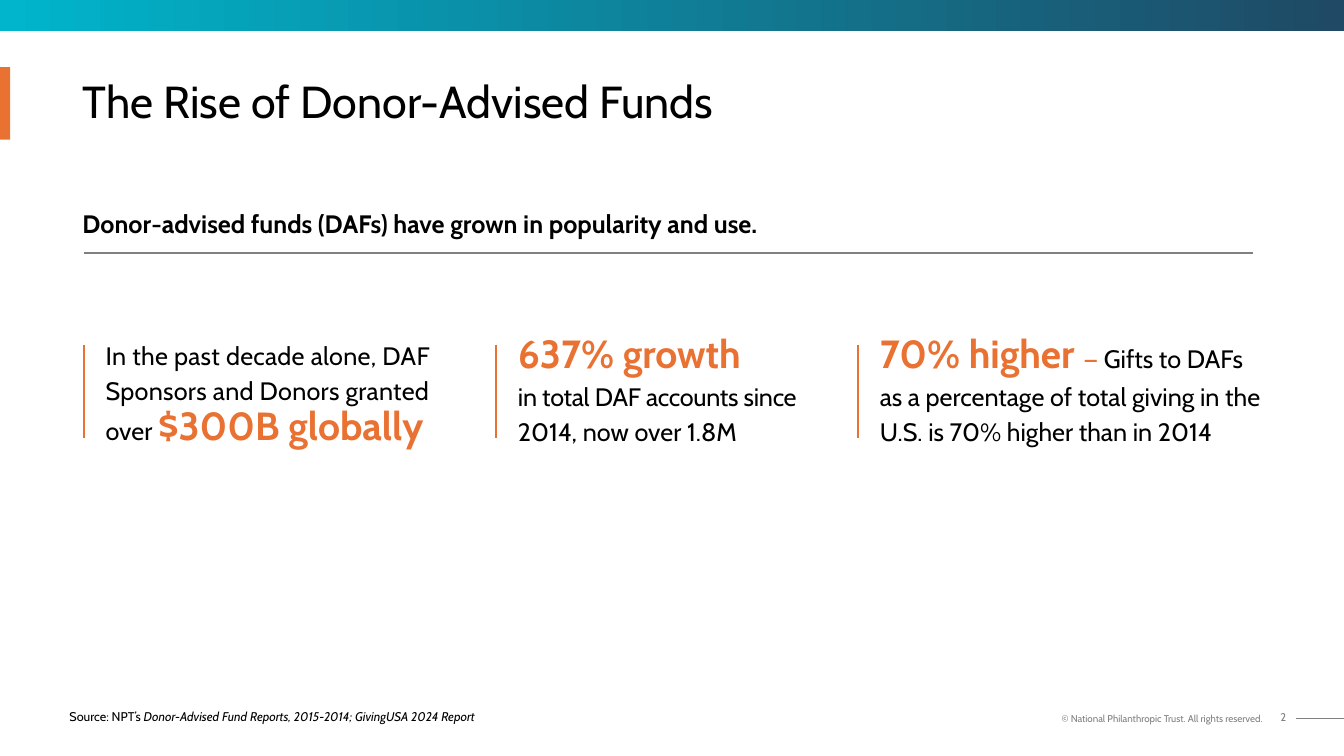
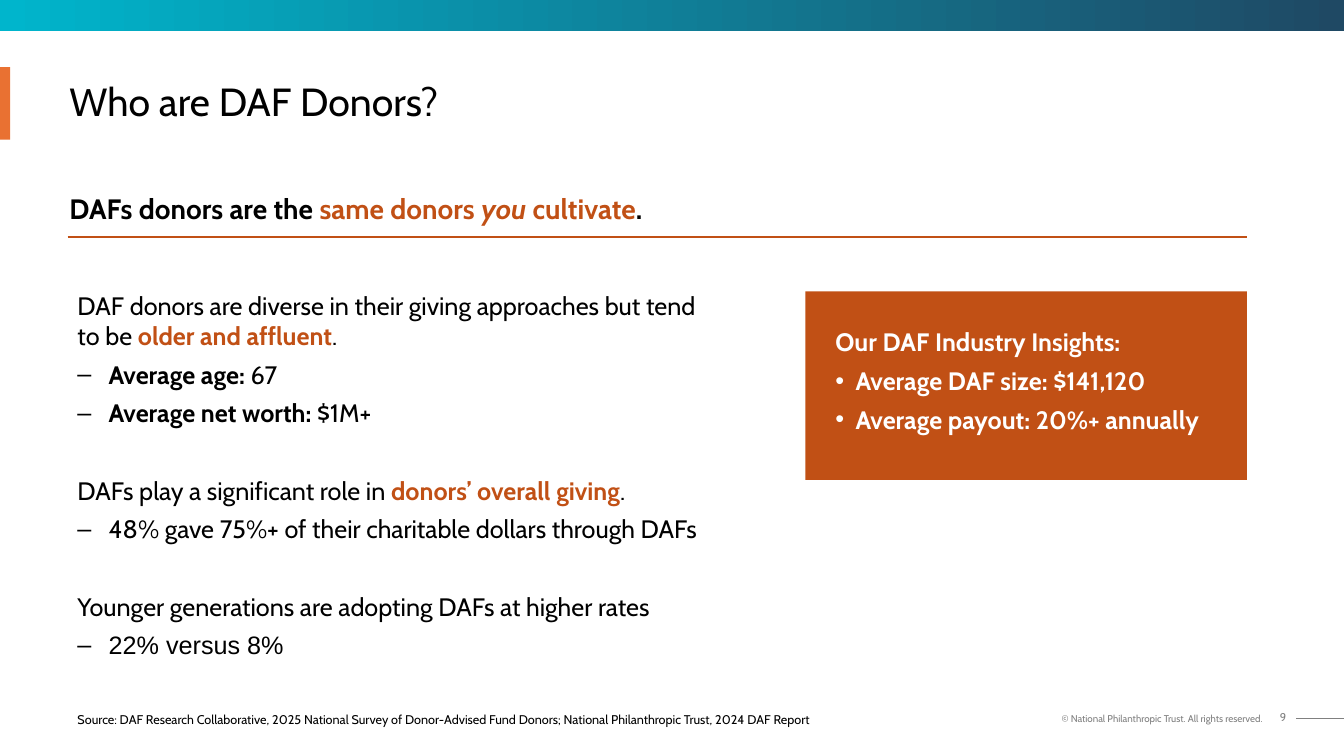
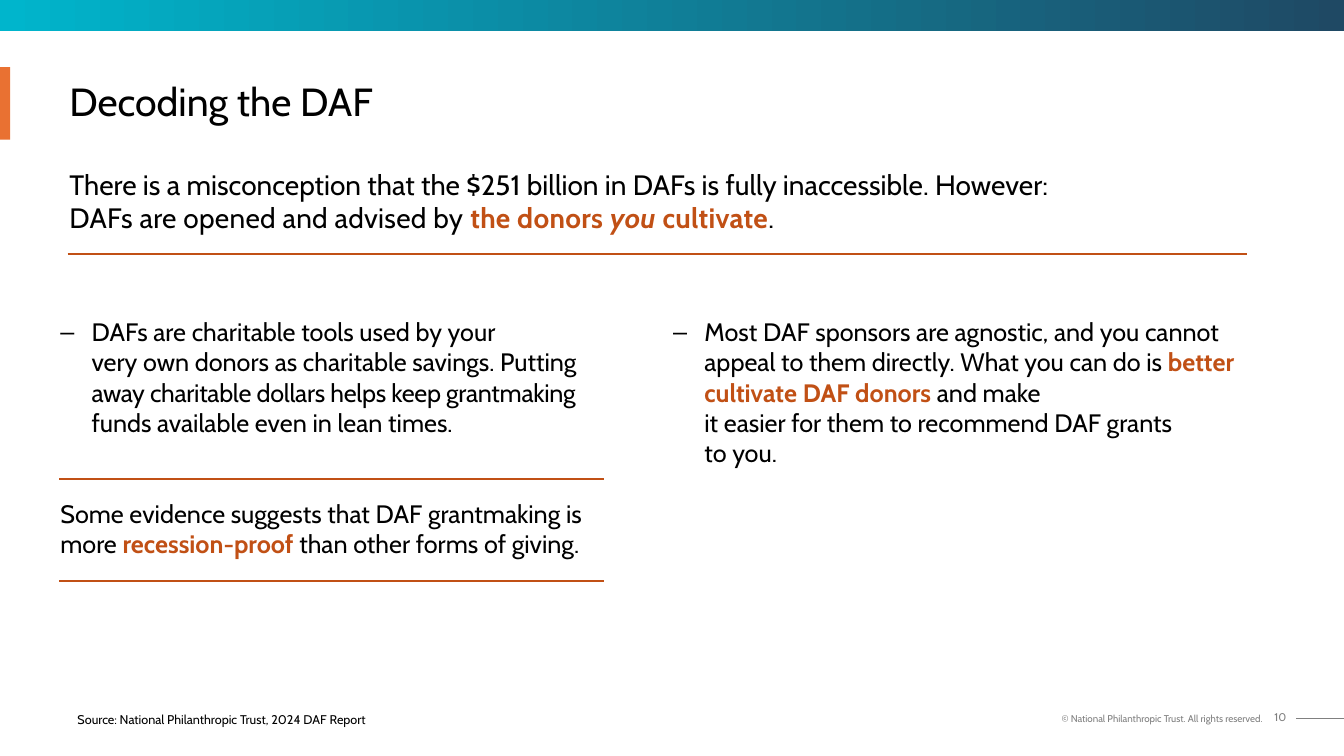
"""Build three slides about donor-advised funds on a grid of 160 columns by 90 rows."""
from dataclasses import dataclass, replace
from typing import NamedTuple

from lxml.etree import SubElement
from pptx import Presentation
from pptx.dml.color import RGBColor
from pptx.enum.shapes import MSO_CONNECTOR as Connector, MSO_SHAPE as Preset
from pptx.enum.text import MSO_ANCHOR as Anchor, PP_ALIGN as Align
from pptx.oxml.ns import qn
from pptx.util import Emu, Inches, Pt

COLUMNS, ROWS = 160, 90
CELL = Inches(1) // 12
COLORS = {
    "black": "000000",
    "white": "FFFFFF",
    "gray": "808080",
    "orange": "E97132",
    "rust": "C15015",
    "teal": "00B5CC",
    "navy": "1F4964",
}
FONT = "Cabin"
HANG = 3.72
BLANK_LINE = 27.6
COPYRIGHT = "© National Philanthropic Trust. All rights reserved."


class Area(NamedTuple):
    left: float
    top: float
    width: float
    height: float


class Rule(NamedTuple):
    left: float
    top: float
    right: float
    bottom: float
    color: str = "rust"
    weight: float = 1.5


@dataclass(frozen=True)
class Span:
    text: str
    color: str = "black"
    size: float = 18
    bold: bool = False
    italic: bool = False
    font: str = FONT
    tracking: int = 0


@dataclass(frozen=True)
class Para:
    spans: tuple[Span, ...]
    bullet: str = ""
    margin: float = 0
    hang: float = 0
    before: float = 0
    after: float = 0
    line: float | None = None
    align: Align = Align.LEFT


class Fact(NamedTuple):
    column: float
    top: float
    width: float
    paragraphs: tuple[Para, ...]


def cells(count: float) -> Emu:
    return Emu(round(count * CELL))


def rgb(name: str) -> RGBColor:
    return RGBColor.from_string(COLORS[name])


def strong(text: str, **changes) -> Span:
    return replace(Span(text, "rust", bold=True), **changes)


def para(*spans: Span | str, **options) -> Para:
    return Para(tuple(Span(s) if isinstance(s, str) else s for s in spans), **options)


def dash(*spans: Span | str, **options) -> Para:
    return para(*spans, bullet="–", margin=HANG, hang=HANG, **options)


def add_span(paragraph, span: Span) -> None:
    for index, line in enumerate(span.text.split("\n")):
        if index:
            paragraph.add_line_break()
        if not line:
            continue
        run = paragraph.add_run()
        run.text = line
        font = run.font
        font.name, font.size = span.font, Pt(span.size)
        font.bold, font.italic = span.bold, span.italic
        font.color.rgb = rgb(span.color)
        if span.tracking:
            run._r.get_or_add_rPr().set("spc", str(span.tracking))


def fill_text(text_frame, paragraphs: tuple[Para, ...], anchor: Anchor = Anchor.TOP) -> None:
    text_frame.word_wrap = True
    text_frame.vertical_anchor = anchor
    for index, item in enumerate(paragraphs):
        paragraph = text_frame.add_paragraph() if index else text_frame.paragraphs[0]
        properties = paragraph._p.get_or_add_pPr()
        properties.set("marL", str(cells(item.margin)))
        properties.set("indent", str(cells(-item.hang)))
        if item.bullet:
            SubElement(properties, qn("a:buFont")).set("typeface", "Arial")
            SubElement(properties, qn("a:buChar")).set("char", item.bullet)
        paragraph.alignment = item.align
        paragraph.space_before, paragraph.space_after = Pt(item.before), Pt(item.after)
        if item.line:
            paragraph.line_spacing = item.line if item.line < 2 else Pt(item.line)
        for span in item.spans:
            add_span(paragraph, span)


def add_text(slide, area: Area, *paragraphs: Para, anchor: Anchor = Anchor.TOP) -> None:
    box = slide.shapes.add_textbox(*map(cells, area))
    fill_text(box.text_frame, paragraphs, anchor)


def add_rule(slide, rule: Rule) -> None:
    connector = slide.shapes.add_connector(Connector.STRAIGHT, *map(cells, rule[:4]))
    connector.line.color.rgb = rgb(rule.color)
    connector.line.width = Pt(rule.weight)
    SubElement(connector._element.spPr, qn("a:effectLst"))


def add_block(slide, area: Area, color: str, end_color: str = ""):
    shape = slide.shapes.add_shape(Preset.RECTANGLE, *map(cells, area))
    shape.shadow.inherit = False
    shape.line.fill.background()
    if end_color:
        shape.fill.gradient()
        shape.fill.gradient_angle = 0
        for stop, name in zip(shape.fill.gradient_stops, (color, end_color)):
            stop.color.rgb = rgb(name)
    else:
        shape.fill.solid()
        shape.fill.fore_color.rgb = rgb(color)
    return shape


def add_page(presentation, number: int, title: Span, title_column: float):
    slide = presentation.slides.add_slide(presentation.slide_layouts[6])
    add_rule(slide, Rule(154.32, 85.56, COLUMNS, 85.56, "gray", 0.75))
    add_text(slide, Area(146.16, 84, 8.16, 4.8),
             para(Span(str(number), "gray", 8), align=Align.RIGHT))
    add_text(slide, Area(121.68, 84.24, 29.8, 4.8),
             para(Span(COPYRIGHT, "gray", 7), align=Align.RIGHT))
    add_block(slide, Area(0, 0, COLUMNS, 3.72), "teal", "navy")
    add_block(slide, Area(0, 8, 1.2, 8.64), "orange")
    add_text(slide, Area(title_column, 8.5, 141.36, 7.8),
             para(title, line=0.9), anchor=Anchor.MIDDLE)
    return slide


def add_source(slide, column: float, top: float, *spans: Span) -> None:
    add_text(slide, Area(column, top, 110, 3), para(*spans))


def build_rise(presentation) -> None:
    slide = add_page(presentation, 2, Span("The Rise of Donor-Advised Funds", size=32), 8.64)
    add_text(slide, Area(8.64, 24.6, 129.24, 5.04), para(
        Span("Donor-advised funds (DAFs) have grown in popularity and use.", bold=True), line=0.9))
    add_rule(slide, Rule(9.96, 30.12, 149.16, 30.12, "gray", 0.75))
    figure = Span("", "orange", 28, bold=True)
    facts = (
        Fact(9.96, 32.16, 48, (
            para(Span("In the past decade alone, DAF Sponsors and Donors granted", tracking=20),
                 line=25),
            para("over ", replace(figure, text="$300B globally"), before=6, line=25))),
        Fact(59.04, 32.4, 39.84, (
            para(replace(figure, text="637% growth"), line=25),
            para(Span("in total DAF accounts since ", tracking=-20), "2014, now over 1.8M",
                 line=25))),
        Fact(102.12, 32.4, 49.2, (
            para(replace(figure, text="70% higher "), Span("— ", "orange"),
                 "Gifts to DAFs\nas a percentage of total giving in the "
                 "U.S. is 70% higher than in 2014", line=25),)),
    )
    for fact in facts:
        add_rule(slide, Rule(fact.column, 41.04, fact.column, 52.2, "orange"))
        add_text(slide, Area(fact.column + 1.44, fact.top, fact.width, 29.04),
                 *fact.paragraphs, anchor=Anchor.MIDDLE)
    add_source(slide, 7.08, 83.76, Span("Source: NPT’s ", size=9),
               Span("Donor-Advised Fund Reports, 2015-2014; GivingUSA 2024 Report",
                    size=9, italic=True))


def build_donors(presentation) -> None:
    slide = add_page(presentation, 9, Span("Who are DAF Donors?", size=28), 7.08)
    add_text(slide, Area(7.08, 22.2, 138.72, 5.28), para(
        Span("DAFs donors are the ", size=20, bold=True),
        strong("same donors ", size=20),
        strong("you", size=20, italic=True),
        strong(" cultivate", size=20),
        Span(".", size=20, bold=True)))
    add_rule(slide, Rule(8.04, 28.2, 148.44, 28.2))
    add_text(
        slide, Area(8.04, 33.96, 78.48, 46),
        para("DAF donors are diverse in their giving approaches but tend to be ",
             strong("older and affluent"), ".", after=6),
        dash(Span("Average age: ", bold=True), "67", after=6),
        dash(Span("Average net worth: ", bold=True), "$1M+", after=6),
        para("DAFs play a significant role in ", strong("donors’ overall giving"), ".",
             before=BLANK_LINE, after=6),
        dash("48% gave 75%+ of their charitable dollars through DAFs", after=6),
        para("Younger generations are adopting DAFs at higher rates",
             before=BLANK_LINE, after=6),
        dash(Span("22% versus 8%", font="Arial"), after=6))
    insights = add_block(slide, Area(95.88, 34.68, 52.56, 22.44), "rust")
    insights.text_frame.margin_top = cells(4.2)
    lines = [strong(text, color="white") for text in (
        "Our DAF Industry Insights:",
        "Average DAF size: $141,120",
        "Average payout: 20%+ annually")]
    fill_text(insights.text_frame, (
        para(lines[0], margin=2.4, after=6),
        *(para(line, bullet="•", margin=4.8, hang=2.4, after=6) for line in lines[1:])))
    add_source(slide, 8.04, 84.12, Span(
        "Source: DAF Research Collaborative, 2025 National Survey of Donor-Advised Fund Donors; "
        "National Philanthropic Trust, 2024 DAF Report", size=9))


def build_decoding(presentation) -> None:
    slide = add_page(presentation, 10, Span("Decoding the DAF", size=28), 7.08)
    add_text(slide, Area(7.08, 19.32, 138.72, 9), para(
        Span("There is a misconception that the $251 billion in DAFs is fully inaccessible. "
             "However:\n", size=20),
        Span("DAFs are opened and advised by ", size=20, tracking=20),
        strong("the donors ", size=20, tracking=20),
        strong("you ", size=20, italic=True, tracking=20),
        strong("cultivate", size=20, tracking=20),
        Span(".", size=20)))
    columns = (
        (dash("DAFs are charitable tools used by your\n"
              "very own donors as charitable savings. Putting ",
              Span("away charitable dollars helps keep grantmaking ", tracking=-20),
              "funds available even in lean times."),
         para("Some evidence suggests that DAF grantmaking is more ",
              strong("recession-proof"), " than other forms of giving.", before=43.2)),
        (dash("Most DAF sponsors are agnostic, and you cannot appeal to them directly. "
              "What you can do is ", strong("better cultivate DAF donors "),
              "and make\nit easier for them to recommend DAF grants\nto you."),),
    )
    for index, paragraphs in enumerate(columns):
        add_text(slide, Area(6 + index * 72.96, 37.08, 69.36, 32), *paragraphs)
    add_rule(slide, Rule(8.04, 30.24, 148.44, 30.24))
    for row in (57, 69.12):
        add_rule(slide, Rule(7.08, row, 71.88, row))
    add_source(slide, 8.04, 84.12,
               Span("Source: National Philanthropic Trust, 2024 DAF Report", size=9))


def main() -> None:
    presentation = Presentation()
    presentation.slide_width, presentation.slide_height = cells(COLUMNS), cells(ROWS)
    for build in (build_rise, build_donors, build_decoding):
        build(presentation)
    presentation.save("out.pptx")


if __name__ == "__main__":
    main()
